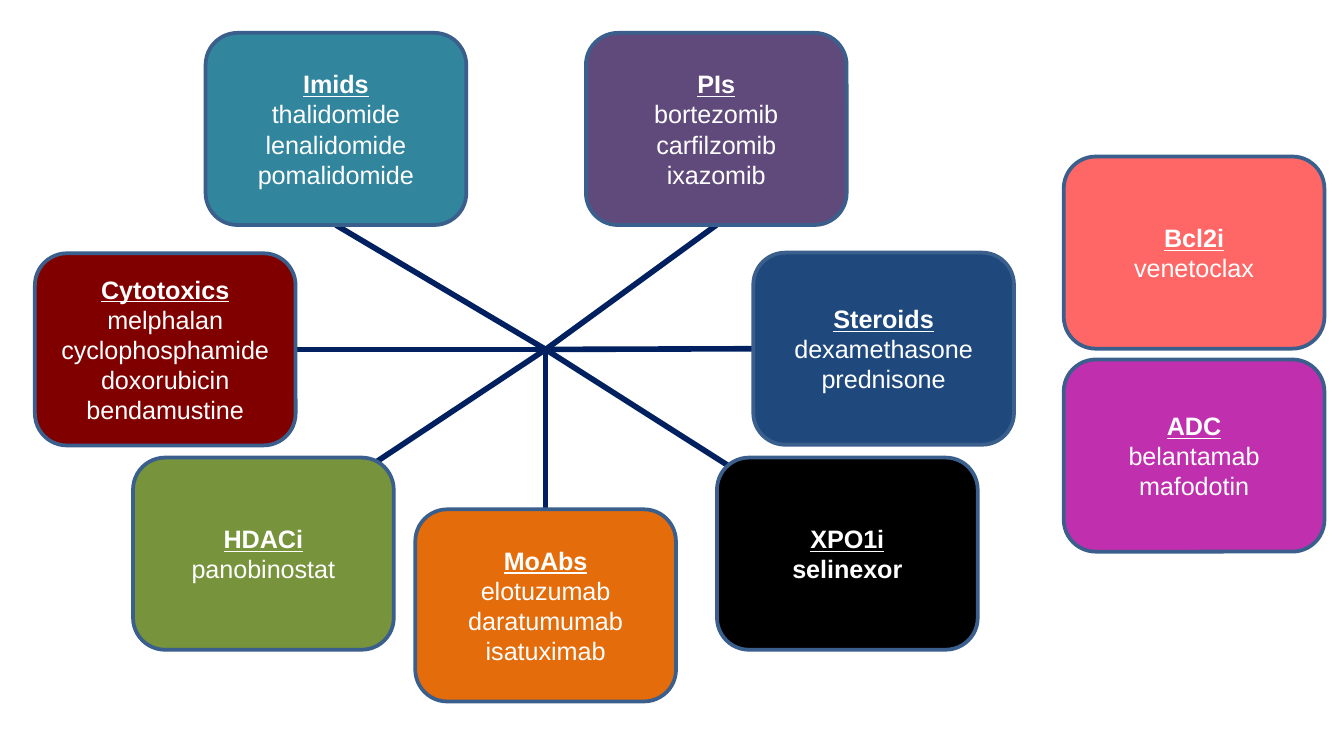
"""Builds a slide of myeloma drug classes around a hub, with two newer classes beside it."""
import pptx
import pptx.dml.color
import pptx.enum.shapes
import pptx.enum.text
import pptx.oxml
import pptx.util

PX = 4572
SLIDE_W, SLIDE_H = 2000, 1125
CARD_W, CARD_H = 388, 286
HUB = (812, 520)
INSET_X, INSET_Y = 15, 8
THEME = {
    "font": "Arial", "size": 13.5, "text": "FFFFFF",
    "outline": "3A5F8C", "outline_width": 2,
    "spoke": "002060", "spoke_width": 3,
    "steroids": "1F497D", "hdac": "77933C", "antibodies": "E46C0A",
    "cytotoxics": "800000", "proteasome": "604A7B", "imids": "31859C",
    "export": "000000", "bcl2": "FF6666", "conjugate": "BF2FAE",
}

DRUG_CLASSES = [
    ("Steroids", ["dexamethasone", "prednisone"], "steroids", (1121, 376), (1121, 519)),
    ("HDACi", ["panobinostat"], "hdac", (198, 681), (538, 702)),
    ("MoAbs", ["elotuzumab", "daratumumab", "isatuximab"], "antibodies", (618, 758), (812, 758)),
    ("Cytotoxics", ["melphalan", "cyclophosphamide", "doxorubicin", "bendamustine"],
     "cytotoxics", (52, 377), (440, 520)),
    ("PIs", ["bortezomib", "carfilzomib", "ixazomib"], "proteasome", (872, 49), (1066, 335)),
    ("Imids", ["thalidomide", "lenalidomide", "pomalidomide"], "imids", (306, 49), (500, 335)),
    ("XPO1i", ["selinexor"], "export", (1067, 681), (1098, 702)),
    ("Bcl2i", ["venetoclax"], "bcl2", (1583, 233), None),
    ("ADC", ["belantamab mafodotin"], "conjugate", (1583, 535), None),
]
BOLD_DRUGS = {"selinexor"}


def color(key):
    return pptx.dml.color.RGBColor.from_string(THEME[key])


def px(*lengths):
    return [length * PX for length in lengths]


deck = pptx.Presentation()
deck.slide_width, deck.slide_height = px(SLIDE_W, SLIDE_H)
slide = deck.slides.add_slide(deck.slide_layouts[6])

for heading, drugs, fill, corner, spoke_start in DRUG_CLASSES:
    container = slide.shapes
    if spoke_start:
        container = slide.shapes.add_group_shape().shapes
        spoke = container.add_connector(
            pptx.enum.shapes.MSO_CONNECTOR.STRAIGHT, *px(*spoke_start, *HUB))
        spoke.line.color.rgb = color("spoke")
        spoke.line.width = pptx.util.Pt(THEME["spoke_width"])
        spoke.element.spPr.append(pptx.oxml.parse_xml(
            '<a:effectLst xmlns:a="http://schemas.openxmlformats.org/drawingml/2006/main"/>'))

    card = container.add_shape(
        pptx.enum.shapes.MSO_SHAPE.ROUNDED_RECTANGLE, *px(*corner, CARD_W, CARD_H))
    card.shadow.inherit = False
    card.fill.solid()
    card.fill.fore_color.rgb = color(fill)
    card.line.color.rgb = color("outline")
    card.line.width = pptx.util.Pt(THEME["outline_width"])

    label = card.text_frame
    label.word_wrap = True
    label.vertical_anchor = pptx.enum.text.MSO_ANCHOR.MIDDLE
    label.margin_left, label.margin_right = px(INSET_X, INSET_X)
    label.margin_top, label.margin_bottom = px(INSET_Y, INSET_Y)
    for index, entry in enumerate([heading, *drugs]):
        paragraph = label.add_paragraph() if index else label.paragraphs[0]
        paragraph.alignment = pptx.enum.text.PP_ALIGN.CENTER
        run = paragraph.add_run()
        run.text = entry
        run.font.name = THEME["font"]
        run.font.size = pptx.util.Pt(THEME["size"])
        run.font.color.rgb = color("text")
        run.font.bold = index == 0 or entry in BOLD_DRUGS
        run.font.underline = index == 0

deck.save("out.pptx")
